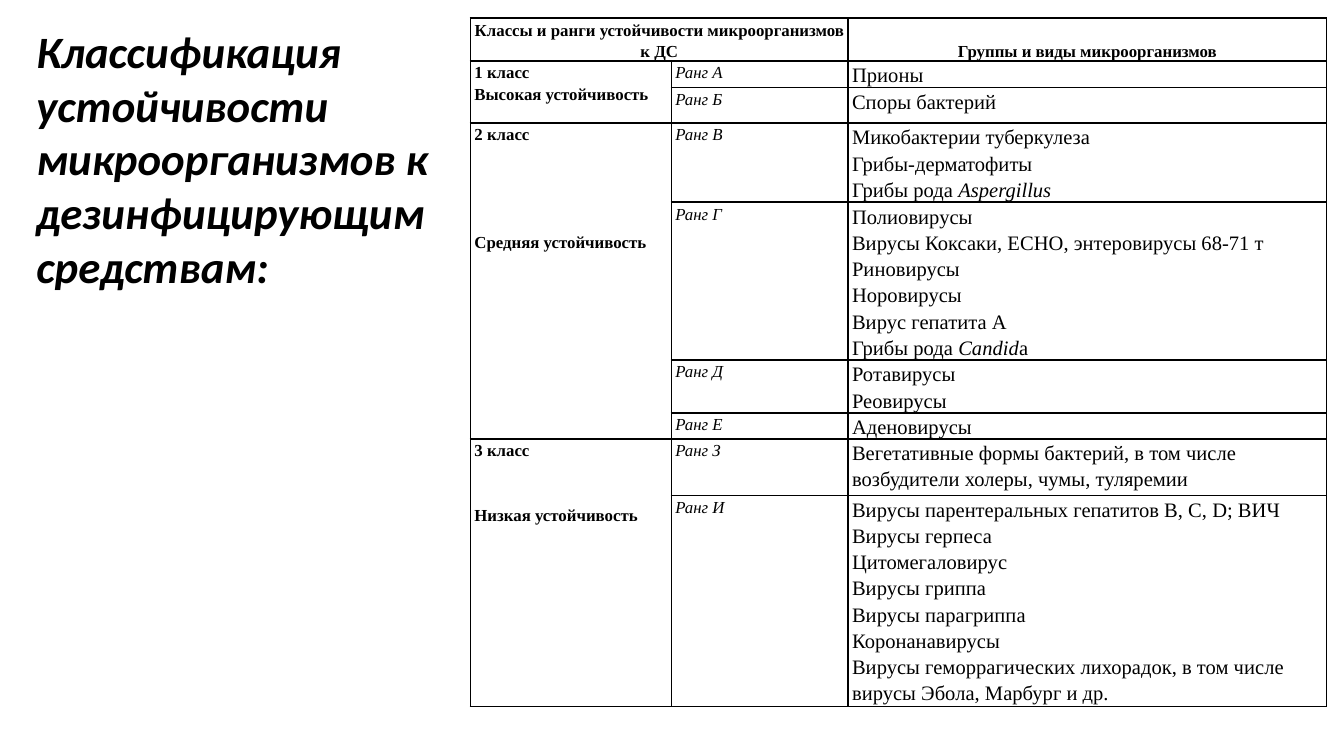
from lxml.etree import SubElement
from pptx import Presentation
from pptx.dml.color import RGBColor
from pptx.enum.text import MSO_ANCHOR, MSO_AUTO_SIZE, PP_ALIGN
from pptx.oxml import parse_xml
from pptx.oxml.ns import nsdecls, qn
from pptx.util import Inches, Pt

COLORS = {"ink": "000000", "paper": "FFFFFF"}
GRID = 0.1

HEADERS = ["Классы и ранги устойчивости микроорганизмов к ДС", "Группы и виды микроорганизмов"]
CLASSES = [
    ("1 класс", "Высокая устойчивость", 0, [
        ("А", 1.95, ["Прионы"]),
        ("Б", 2.65, ["Споры бактерий"]),
    ]),
    ("2 класс", "Средняя устойчивость", 46, [
        ("В", 5.9, ["Микобактерии туберкулеза", "Грибы-дерматофиты", "Грибы рода *Aspergillus"]),
        ("Г", 11.75, ["Полиовирусы", "Вирусы Коксаки, ЕСНО, энтеровирусы 68-71 т", "Риновирусы",
                      "Норовирусы", "Вирус гепатита А", "Грибы рода *Candid*a"]),
        ("Д", 3.9, ["Ротавирусы", "Реовирусы"]),
        ("Е", 1.95, ["Аденовирусы"]),
    ]),
    ("3 класс", "Низкая устойчивость", 23, [
        ("З", 4.2, ["Вегетативные формы бактерий, в том числе", "возбудители холеры, чумы, туляремии"]),
        ("И", 15.7, ["Вирусы парентеральных гепатитов В, С, D; ВИЧ", "Вирусы герпеса", "Цитомегаловирус",
                     "Вирусы гриппа", "Вирусы парагриппа", "Коронанавирусы",
                     "Вирусы геморрагических лихорадок, в том числе вирусы Эбола, Марбург и др."]),
    ]),
]


def grid(units):
    return Inches(units * GRID)


class Deck:
    """Holds the style and the current slide, and draws each kind of element."""

    def __init__(self, cols, rows):
        self.prs = Presentation()
        self.prs.slide_width, self.prs.slide_height = grid(cols), grid(rows)
        self.s = self.prs.slides.add_slide(self.prs.slide_layouts[6])

    def run(self, p, text, size, font, bold=False, italic=False):
        r = p.add_run()
        r.text = text
        r.font.size, r.font.name = Pt(size), font
        r.font.bold, r.font.italic = bold, italic
        r.font.color.rgb = RGBColor.from_string(COLORS["ink"])

    def title(self, lines, x, y, w, h):
        tf = self.s.shapes.add_textbox(grid(x), grid(y), grid(w), grid(h)).text_frame
        tf.word_wrap = True
        tf.auto_size = MSO_AUTO_SIZE.SHAPE_TO_FIT_TEXT
        tf.margin_left = tf.margin_right = Inches(0.07)
        tf.margin_top = tf.margin_bottom = Inches(0.04)
        for i, line in enumerate(lines):
            p = tf.add_paragraph() if i else tf.paragraphs[0]
            self.run(p, line, 24, "Calibri", bold=True, italic=True)

    def table(self, x, y, widths, heights):
        frame = self.s.shapes.add_table(len(heights), len(widths), grid(x), grid(y),
                                        grid(sum(widths)), grid(sum(heights)))
        table = frame.table
        table.first_row = table.horz_banding = False
        for column, width in zip(table.columns, widths):
            column.width = grid(width)
        for row, height in zip(table.rows, heights):
            row.height = grid(height)
        for cell in table.iter_cells():
            self.frame_cell(cell)
        return table

    def frame_cell(self, cell):
        cell.margin_left = cell.margin_right = Inches(0.03)
        cell.margin_top = cell.margin_bottom = 0
        cell.fill.solid()
        cell.fill.fore_color.rgb = RGBColor.from_string(COLORS["paper"])
        tcPr = cell._tc.get_or_add_tcPr()
        for i, side in enumerate(("lnL", "lnR", "lnT", "lnB")):
            ln = parse_xml(f'<a:{side} {nsdecls("a")} w="{Pt(1)}"/>')
            fill = SubElement(ln, qn("a:solidFill"))
            SubElement(fill, qn("a:srgbClr"), val=COLORS["ink"])
            tcPr.insert(i, ln)

    def cell_text(self, cell, lines, size=9, bold=False, italic=False, align=PP_ALIGN.JUSTIFY, gap=0):
        tf = cell.text_frame
        for i, line in enumerate(lines):
            p = tf.add_paragraph() if i else tf.paragraphs[0]
            p.alignment, p.line_spacing = align, 1.15
            if i and gap:
                p.space_before = Pt(gap)
            for j, part in enumerate(line.split("*")):
                self.run(p, part, size, "Times New Roman", bold, italic or j % 2 == 1)


def main():
    deck = Deck(100, 56.25)
    heights = [3.2] + [height for *_, ranks in CLASSES for _, height, _ in ranks]
    table = deck.table(35, 1.35, [14.95, 13.15, 35.6], heights)

    table.cell(0, 0).merge(table.cell(0, 1))
    for col, header in zip((0, 2), HEADERS):
        cell = table.cell(0, col)
        cell.vertical_anchor = MSO_ANCHOR.BOTTOM
        deck.cell_text(cell, [header], bold=True, align=PP_ALIGN.CENTER)

    row = 1
    for name, resistance, gap, ranks in CLASSES:
        first = table.cell(row, 0)
        first.merge(table.cell(row + len(ranks) - 1, 0))
        deck.cell_text(first, [name, resistance], bold=True, gap=gap)
        align = PP_ALIGN.LEFT if name == "3 класс" else PP_ALIGN.JUSTIFY
        for rank, _, species in ranks:
            deck.cell_text(table.cell(row, 1), [f"Ранг {rank}"], italic=True)
            deck.cell_text(table.cell(row, 2), species, size=11, align=align)
            row += 1

    deck.title(["Классификация устойчивости", "микроорганизмов к дезинфицирующим средствам:"],
               2, 1.35, 31.5, 21)
    deck.prs.save("out.pptx")


if __name__ == "__main__":
    main()
